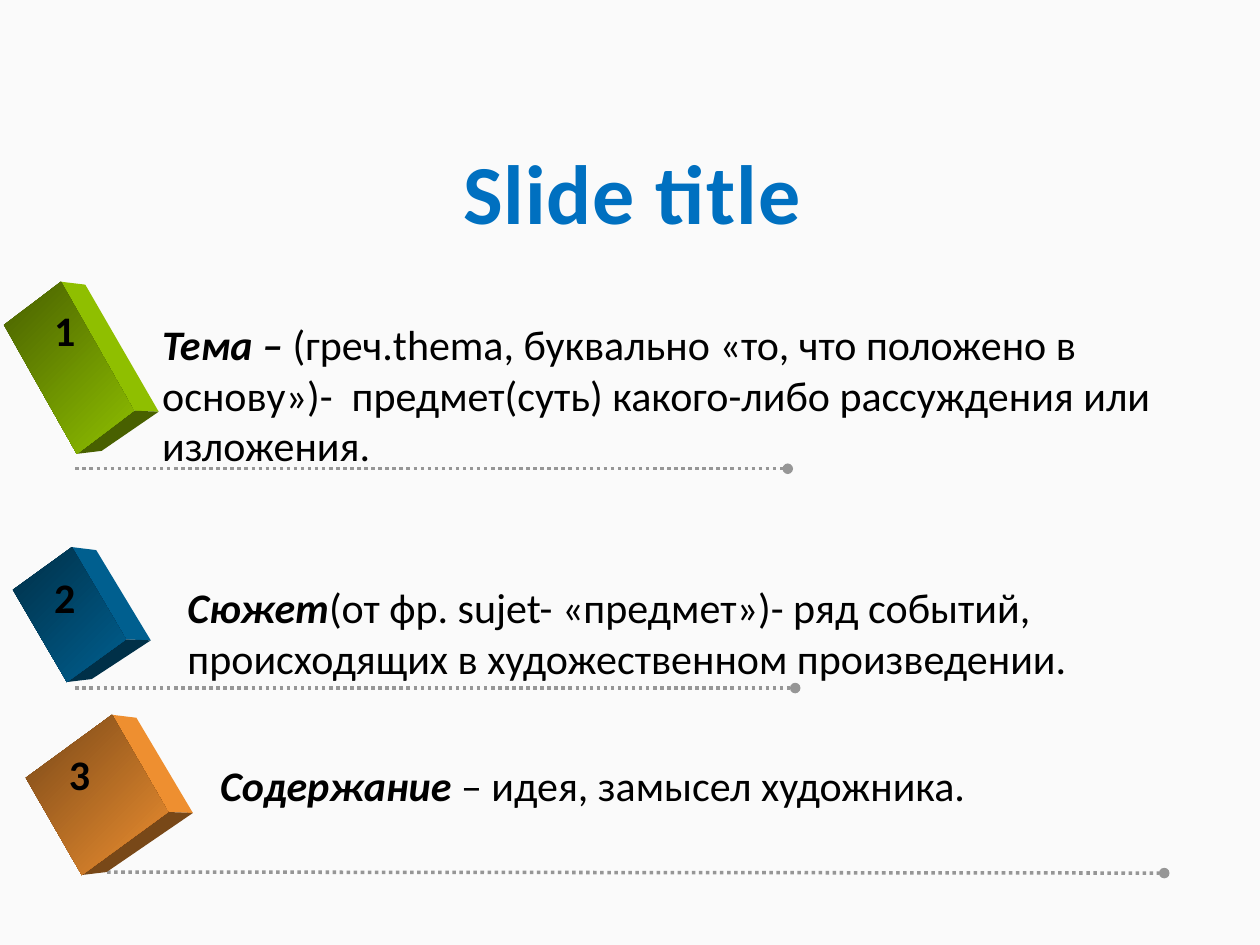
from lxml import etree
from pptx import Presentation
from pptx import util as u
from pptx.dml.color import RGBColor
from pptx.enum import dml, shapes, text
from pptx.oxml import ns

PAPER = RGBColor(0xFA, 0xFA, 0xFA)
BLUE = RGBColor(0x00, 0x70, 0xC0)
BLACK = RGBColor(0, 0, 0)
GRAY = RGBColor(0x96, 0x96, 0x96)
GREEN = RGBColor(0x8F, 0xBF, 0x00)
MOSS = RGBColor(0x48, 0x60, 0x00)
SEA = RGBColor(0x00, 0x5F, 0x8F)
NAVY = RGBColor(0x00, 0x30, 0x48)
AMBER = RGBColor(0xEE, 0x8F, 0x30)
BROWN = RGBColor(0x78, 0x48, 0x18)

ROWS = [
    {
        "line": (1.52, 9.45, 15.88, 9.45),
        "block": ((1.23, 5.68), (0.08, 6.55), (1.55, 9.15)),
        "tones": (GREEN, MOSS),
        "body": (3.02, 6.3, 20.83, 3.33),
        "runs": ("Тема –", " (греч.thema, буквально «то, что положено в основу»)-  "
                 "предмет(суть) какого-либо рассуждения или изложения."),
        "mark": (0.84, 6.02, 1.02, 2.97),
    },
    {
        "line": (1.52, 13.87, 16.03, 13.87),
        "block": ((1.45, 11.03), (0.26, 11.89), (1.35, 13.75)),
        "tones": (SEA, NAVY),
        "body": (3.53, 11.6, 20.37, 2.31),
        "runs": ("Сюжет", "(от фр. sujet- «предмет»)- ряд событий, "
                 "происходящих в художественном произведении."),
        "mark": (0.84, 11.4, 1.02, 2.16),
    },
    {
        "line": (2.16, 17.58, 23.47, 17.6),
        "block": ((2.26, 14.41), (0.52, 15.68), (1.65, 17.64)),
        "tones": (AMBER, BROWN),
        "body": (4.19, 15.19, 17.83, 1.3),
        "runs": ("Содержание ", "– идея, замысел художника."),
        "mark": (1.14, 14.96, 1.5, 2.26),
    },
]


def shift(spot, dx, dy):
    return spot[0] + dx, spot[1] + dy


class Deck:
    base = {"name": "Calibri", "size": u.Pt(24)}

    def __init__(self):
        self.file = Presentation()
        self.file.slide_width = u.Cm(25.4)
        self.file.slide_height = u.Cm(19.05)
        self.slide = self.file.slides.add_slide(self.file.slide_layouts[5])
        fill = self.slide.background.fill
        fill.solid()
        fill.fore_color.rgb = PAPER

    def style(self, run, color=BLACK, **more):
        for key, val in {**self.base, **more}.items():
            setattr(run.font, key, val)
        run.font.color.rgb = color

    def title(self, words, box):
        shape = self.slide.shapes.title
        for key, val in zip(("left", "top", "width", "height"), box):
            setattr(shape, key, u.Cm(val))
        shape.text_frame.vertical_anchor = text.MSO_ANCHOR.MIDDLE
        para = shape.text_frame.paragraphs[0]
        para.alignment = text.PP_ALIGN.CENTER
        para.line_spacing = 0.9
        run = para.add_run()
        run.text = words
        self.style(run, BLUE, size=u.Pt(48), bold=True)
        run.font._element.set("spc", "50")

    def label(self, runs, box, wrap=True):
        frame = self.slide.shapes.add_textbox(*map(u.Cm, box)).text_frame
        frame.word_wrap = wrap
        for words, form in runs:
            run = frame.paragraphs[0].add_run()
            run.text = words
            self.style(run, **form)

    def line(self, ends):
        link = self.slide.shapes.add_connector(
            shapes.MSO_CONNECTOR.STRAIGHT, *map(u.Cm, ends))
        link.line.color.rgb = GRAY
        link.line.width = u.Pt(2)
        link.line.dash_style = dml.MSO_LINE.ROUND_DOT
        etree.SubElement(link.line._get_or_add_ln(), ns.qn("a:tailEnd"), type="oval")
        etree.SubElement(link._element.spPr, ns.qn("a:effectLst"))

    def face(self, spots, tone, dark=None):
        first, *rest = [(u.Cm(x), u.Cm(y)) for x, y in spots]
        pen = self.slide.shapes.build_freeform(*first)
        pen.add_line_segments(rest, close=True)
        shape = pen.convert_to_shape()
        shape.shadow.inherit = False
        shape.line.fill.background()
        if dark is None:
            shape.fill.solid()
            shape.fill.fore_color.rgb = tone
            return
        shape.fill.gradient()
        shape.fill.gradient_angle = 315
        for stop, color in zip(shape.fill.gradient_stops, (dark, tone)):
            stop.color.rgb = color

    def block(self, spots, tone, dark):
        top, left, low = spots
        right = (top[0] + low[0] - left[0], top[1] + low[1] - left[1])
        edge = shift(right, 0.5, 0.02)
        self.face([top, shift(top, 0.49, 0.06), edge, right], tone)
        self.face([right, edge, shift(low, 0.5, -0.06), low], dark)
        self.face([top, right, low, left], tone, dark)


def main():
    deck = Deck()
    deck.title("Slide title", (5.94, 2.87, 13.61, 2.21))
    for num, row in enumerate(ROWS, 1):
        deck.line(row["line"])
        deck.block(row["block"], *row["tones"])
        term, rest = row["runs"]
        deck.label([(term, {"bold": True, "italic": True}), (rest, {})], row["body"])
        deck.label([(str(num), {"bold": True})], row["mark"], wrap=False)
    deck.file.save("out.pptx")


if __name__ == "__main__":
    main()
